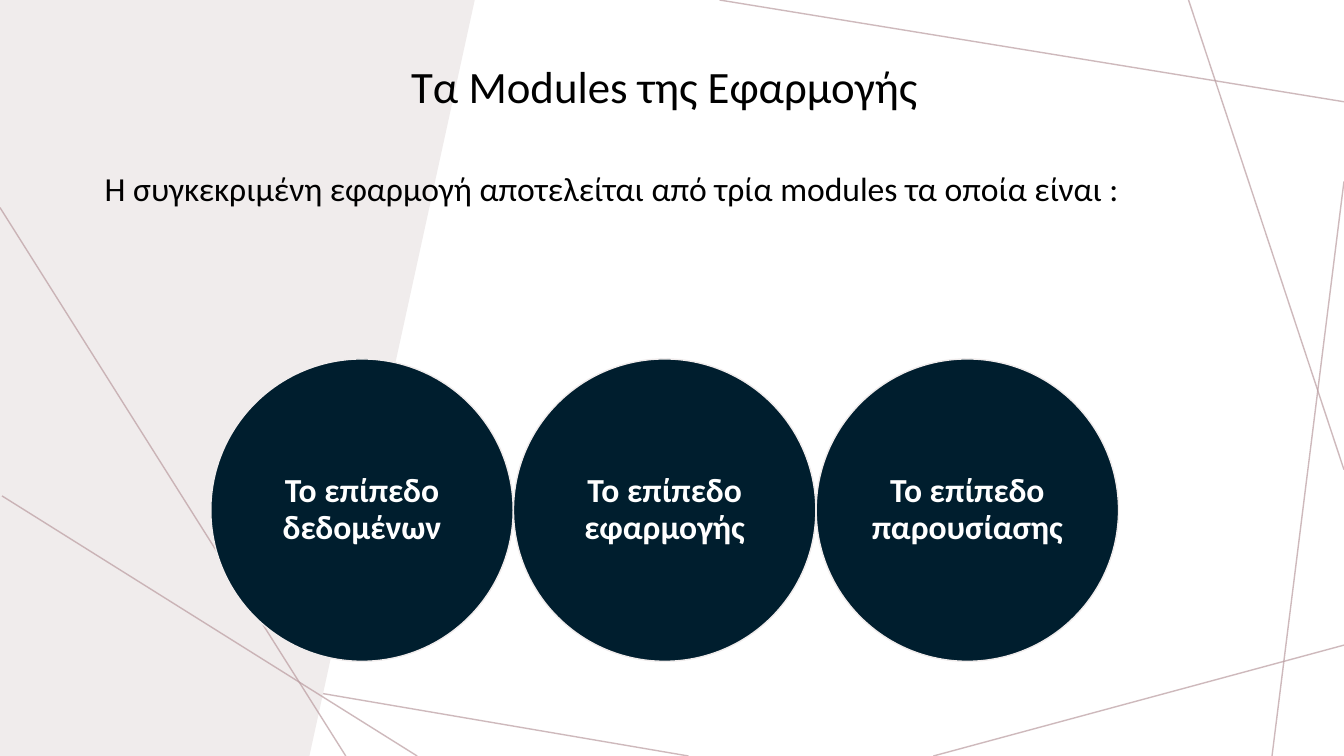
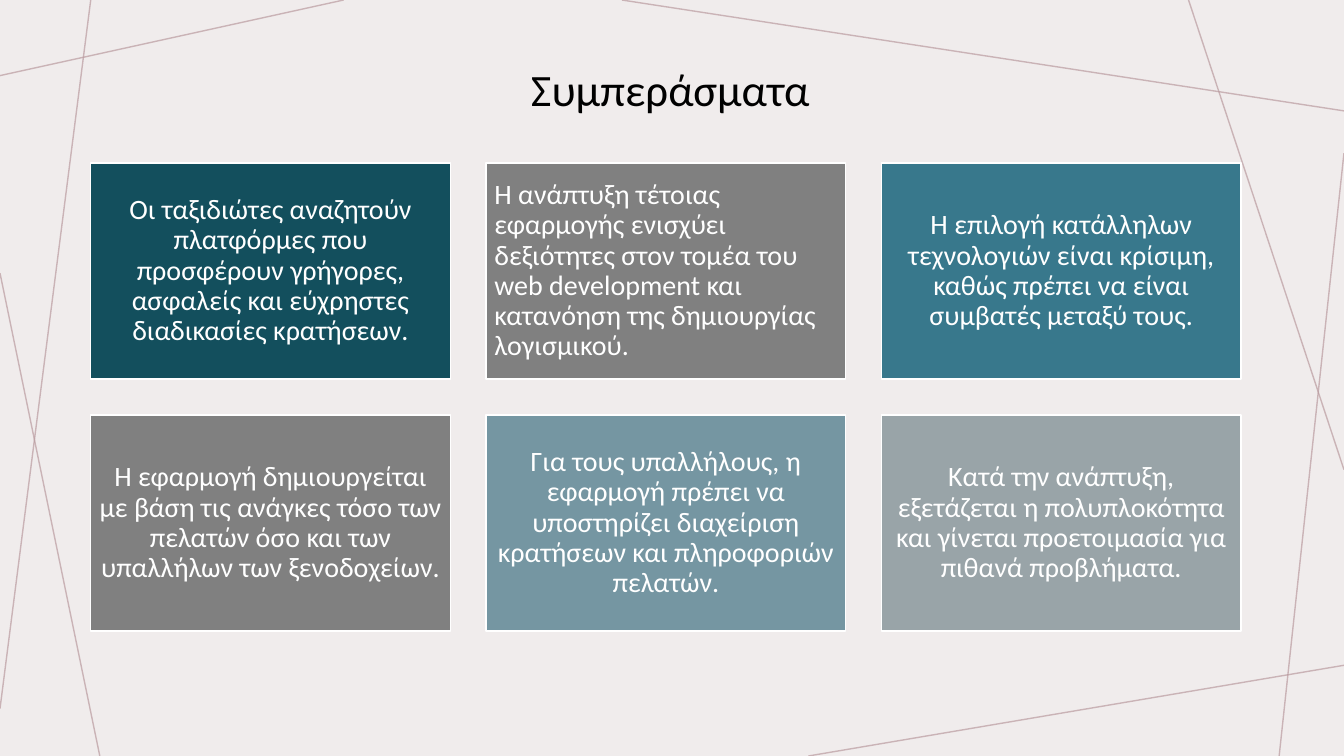
"""Build two slides on the modules and the conclusions of a hotel booking application."""
from typing import NamedTuple

from lxml.etree import SubElement
from pptx import Presentation
from pptx.dml.color import RGBColor
from pptx.enum.shapes import MSO_CONNECTOR as Connector, MSO_SHAPE as Preset
from pptx.enum.text import MSO_ANCHOR as Anchor, MSO_AUTO_SIZE as AutoSize, PP_ALIGN as Align
from pptx.oxml.ns import qn
from pptx.slide import Slide
from pptx.util import Pt

COLORS = {
    "white": "FFFFFF", "black": "000000", "mist": "F0ECEC", "thread": "BA9CA0",
    "navy": "001E2E", "petrol": "134F5D", "gray": "808080", "teal": "38788C",
    "steel": "7596A2", "silver": "99A4A8",
}
WIDTH, HEIGHT = 960, 540
TITLE_FONT = {"name": "Calibri", "size": Pt(32)}
INTRO_FONT = {"name": "Calibri", "size": Pt(24)}
MODULE_FONT = {"name": "Calibri", "size": Pt(24), "bold": True}
CARD_FONT = {"name": "Calibri", "size": Pt(20)}
FREE_TEXT = {"word_wrap": True, "auto_size": AutoSize.SHAPE_TO_FIT_TEXT}


class Thread(NamedTuple):
    x1: float
    y1: float
    x2: float
    y2: float


class Box(NamedTuple):
    left: float
    top: float
    width: float
    height: float


class Panel(NamedTuple):
    text: str
    fill: str
    align: Align = Align.CENTER


class PanelStyle(NamedTuple):
    preset: Preset
    border: str
    font: dict
    margin: float


SHARED_THREADS = [Thread(WIDTH, 335.5, 849, 0)]
MODULES_THREADS = [
    Thread(491.8, HEIGHT, 230.5, 495.4),
    Thread(WIDTH, 460.8, 666.7, HEIGHT),
    Thread(WIDTH, 129.6, 908.6, HEIGHT),
    Thread(WIDTH, 72.7, 514, 0),
]
WEDGE_THREADS = [Thread(298, HEIGHT, 1.4, 354.2), Thread(0, 148.3, 247, HEIGHT)]
CONCLUSIONS_THREADS = [
    Thread(245.5, 0, 0, 54),
    Thread(64.8, 0, 0, 506.2),
    Thread(71.3, HEIGHT, 0, 195.1),
    Thread(WIDTH, 475.2, 577.4, HEIGHT),
    Thread(WIDTH, 109.4, 913.7, HEIGHT),
    Thread(WIDTH, 79.2, 444.2, 0),
]
MODULES = [
    Panel("Το επίπεδο δεδομένων", "navy"),
    Panel("Το επίπεδο εφαρμογής", "navy"),
    Panel("Το επίπεδο παρουσίασης", "navy"),
]
CONCLUSIONS = [
    Panel("Οι ταξιδιώτες αναζητούν πλατφόρμες που προσφέρουν γρήγορες, ασφαλείς και "
          "εύχρηστες διαδικασίες κρατήσεων.", "petrol"),
    Panel("Η ανάπτυξη τέτοιας εφαρμογής ενισχύει δεξιότητες στον τομέα του web development "
          "και κατανόηση της δημιουργίας λογισμικού.", "gray", Align.LEFT),
    Panel("Η επιλογή κατάλληλων τεχνολογιών είναι κρίσιμη, καθώς πρέπει να είναι συμβατές "
          "μεταξύ τους.", "teal"),
    Panel("Η εφαρμογή δημιουργείται με βάση τις ανάγκες τόσο των πελατών όσο και των "
          "υπαλλήλων των ξενοδοχείων.", "gray"),
    Panel("Για τους υπαλλήλους, η εφαρμογή πρέπει να υποστηρίζει διαχείριση κρατήσεων και "
          "πληροφοριών πελατών.", "steel"),
    Panel("Κατά την ανάπτυξη, εξετάζεται η πολυπλοκότητα και γίνεται προετοιμασία για "
          "πιθανά προβλήματα.", "silver"),
]
CIRCLE = PanelStyle(Preset.OVAL, "mist", MODULE_FONT, 0)
CARD = PanelStyle(Preset.RECTANGLE, "white", CARD_FONT, 6)


def rgb(color: str) -> RGBColor:
    return RGBColor.from_string(COLORS[color])


def apply(target, values: dict) -> None:
    for attribute, value in values.items():
        setattr(target, attribute, value)


def paint(fill, color: str) -> None:
    fill.solid()
    fill.fore_color.rgb = rgb(color)


def write(paragraph, text: str, font: dict, color: str) -> None:
    paragraph.text = text
    apply(paragraph.font, font)
    paragraph.font.color.rgb = rgb(color)


def add_slide(deck, background: str) -> Slide:
    slide = deck.slides.add_slide(deck.slide_layouts[6])
    paint(slide.background.fill, background)
    return slide


def draw_threads(slide: Slide, threads: list[Thread]) -> None:
    for thread in threads:
        strand = slide.shapes.add_connector(Connector.STRAIGHT, *map(Pt, thread))
        strand.line.width = Pt(1)
        strand.line.color.rgb = rgb("thread")
        properties = strand._element.spPr
        tint = next(properties.iter(qn("a:srgbClr")))
        SubElement(tint, qn("a:alpha"), val="70000")
        SubElement(properties, qn("a:effectLst"))


def draw_wedge(slide: Slide) -> None:
    outline = slide.shapes.build_freeform(Pt(0), Pt(0))
    corners = [(339.1, 0), (221, HEIGHT), (0, HEIGHT)]
    outline.add_line_segments([(Pt(x), Pt(y)) for x, y in corners], close=True)
    wedge = outline.convert_to_shape()
    wedge.shadow.inherit = False
    paint(wedge.fill, "mist")
    wedge.line.fill.background()


def draw_text(slide: Slide, text: str, box: Box, font: dict) -> None:
    frame = slide.shapes.add_textbox(*map(Pt, box)).text_frame
    apply(frame, FREE_TEXT)
    write(frame.paragraphs[0], text, font, "black")


def draw_panels(slide: Slide, panels: list[Panel], first: Box, gap_x: float, gap_y: float,
                style: PanelStyle) -> None:
    margin = Pt(style.margin)
    frame_format = {
        "word_wrap": True, "vertical_anchor": Anchor.MIDDLE,
        "margin_left": margin, "margin_top": margin,
        "margin_right": margin, "margin_bottom": margin,
    }
    for index, panel in enumerate(panels):
        row, column = divmod(index, 3)
        box = first._replace(left=first.left + column * (first.width + gap_x),
                             top=first.top + row * (first.height + gap_y))
        tile = slide.shapes.add_shape(style.preset, *map(Pt, box))
        tile.shadow.inherit = False
        paint(tile.fill, panel.fill)
        tile.line.color.rgb = rgb(style.border)
        tile.line.width = Pt(1)
        apply(tile.text_frame, frame_format)
        message = tile.text_frame.paragraphs[0]
        write(message, panel.text, style.font, "white")
        apply(message, {"alignment": panel.align, "line_spacing": 0.9})


def build_modules(deck) -> None:
    slide = add_slide(deck, "white")
    draw_threads(slide, SHARED_THREADS + MODULES_THREADS)
    draw_wedge(slide)
    draw_threads(slide, WEDGE_THREADS)
    draw_panels(slide, MODULES, Box(150.6, 256.4, 216, 216), 0.2, 0, CIRCLE)
    draw_text(slide, "Τα Modules της Εφαρμογής", Box(286.6, 38.2, 386.6, 46), TITLE_FONT)
    draw_text(slide, "Η συγκεκριμένη εφαρμογή αποτελείται από τρία modules τα οποία είναι :",
              Box(67.7, 116.6, 823.7, 36), INTRO_FONT)


def build_conclusions(deck) -> None:
    slide = add_slide(deck, "mist")
    draw_threads(slide, SHARED_THREADS + CONCLUSIONS_THREADS)
    draw_panels(slide, CONCLUSIONS, Box(64.8, 116.6, 257, 154.2), 25.4, 25.8, CARD)
    draw_text(slide, "Συμπεράσματα", Box(372.2, 40.3, 215.3, 46), TITLE_FONT)


def main() -> None:
    deck = Presentation()
    apply(deck, {"slide_width": Pt(WIDTH), "slide_height": Pt(HEIGHT)})
    build_modules(deck)
    build_conclusions(deck)
    deck.save("out.pptx")


if __name__ == "__main__":
    main()
